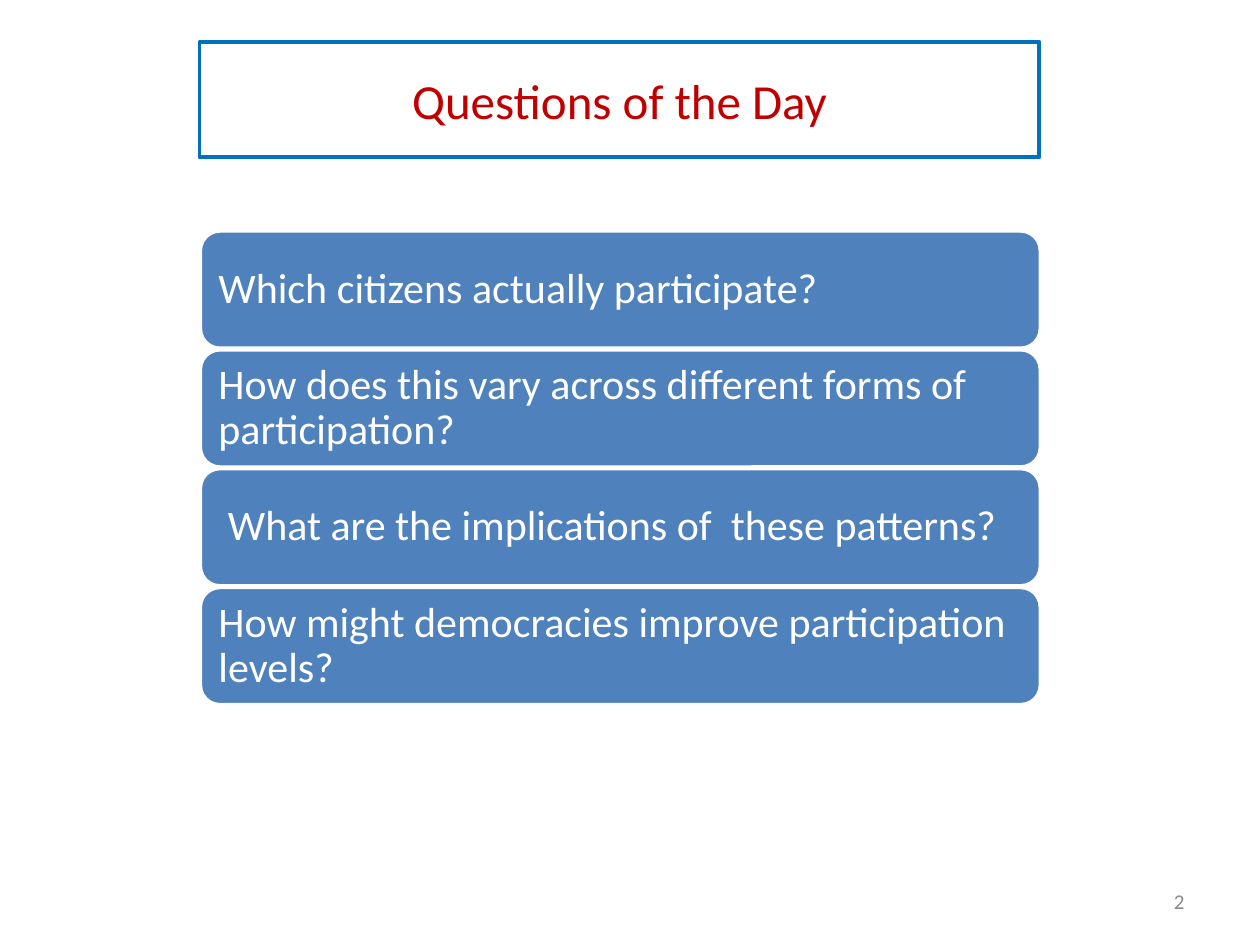
from dataclasses import dataclass

import pptx
import pptx.dml.color
import pptx.enum.shapes
import pptx.enum.text
import pptx.util

Pt = pptx.util.Pt
RGBColor = pptx.dml.color.RGBColor
Align = pptx.enum.text.PP_ALIGN
Anchor = pptx.enum.text.MSO_ANCHOR

RED = RGBColor(0xC0, 0x00, 0x00)
BORDER_BLUE = RGBColor(0x00, 0x70, 0xC0)
BAR_BLUE = RGBColor(0x4F, 0x81, 0xBD)
WHITE = RGBColor(0xFF, 0xFF, 0xFF)
GRAY = RGBColor(0x89, 0x89, 0x89)

FONT = "Calibri"
BAR_LEFT, BAR_TOP = 114.5, 132
BAR_WIDTH, BAR_HEIGHT = 480, 67
BAR_PITCH = 67.9

QUESTIONS = (
    "Which citizens actually participate?",
    "How does this vary across different forms of participation?",
    " What are the implications of  these patterns?",
    "How might democracies improve participation levels?",
)


@dataclass(frozen=True)
class QuestionBar:
    text: str
    top: float


def write_text(shape, text: str, size: float, color: RGBColor, align: Align) -> None:
    frame = shape.text_frame
    frame.word_wrap = True
    frame.auto_size = pptx.enum.text.MSO_AUTO_SIZE.NONE
    frame.vertical_anchor = Anchor.MIDDLE
    frame.text = text
    para = frame.paragraphs[0]
    para.alignment = align
    span = para.runs[0]
    span.font.name = FONT
    span.font.size = Pt(size)
    span.font.color.rgb = color


def draw_title(page, text: str) -> None:
    title = page.shapes.title
    title.left, title.top = Pt(114), Pt(24)
    title.width, title.height = Pt(480), Pt(66)
    title.line.color.rgb = BORDER_BLUE
    title.line.width = Pt(2.25)
    write_text(title, text, 28, RED, Align.CENTER)


def draw_bar(page, bar: QuestionBar) -> None:
    box = page.shapes.add_shape(
        pptx.enum.shapes.MSO_SHAPE.ROUNDED_RECTANGLE,
        Pt(BAR_LEFT), Pt(bar.top), Pt(BAR_WIDTH), Pt(BAR_HEIGHT),
    )
    box.shadow.inherit = False
    box.fill.solid()
    box.fill.fore_color.rgb = BAR_BLUE
    box.line.color.rgb = WHITE
    box.line.width = Pt(2)
    write_text(box, bar.text, 24, WHITE, Align.LEFT)
    frame = box.text_frame
    frame.margin_left = frame.margin_right = Pt(7.2)
    frame.margin_top = frame.margin_bottom = Pt(7.2)
    frame.paragraphs[0].line_spacing = 0.9


def draw_page_number(page, number: str) -> None:
    box = page.shapes.add_textbox(Pt(516), Pt(500.5), Pt(168), Pt(28.75))
    write_text(box, number, 12, GRAY, Align.RIGHT)


def main() -> None:
    deck = pptx.Presentation()
    deck.slide_width, deck.slide_height = Pt(720), Pt(540)
    page = deck.slides.add_slide(deck.slide_layouts[0])
    subtitle = page.placeholders[1].element
    subtitle.getparent().remove(subtitle)

    draw_title(page, "Questions of the Day")
    for index, question in enumerate(QUESTIONS):
        draw_bar(page, QuestionBar(question, BAR_TOP + index * BAR_PITCH))
    draw_page_number(page, "2")
    deck.save("out.pptx")


if __name__ == "__main__":
    main()
